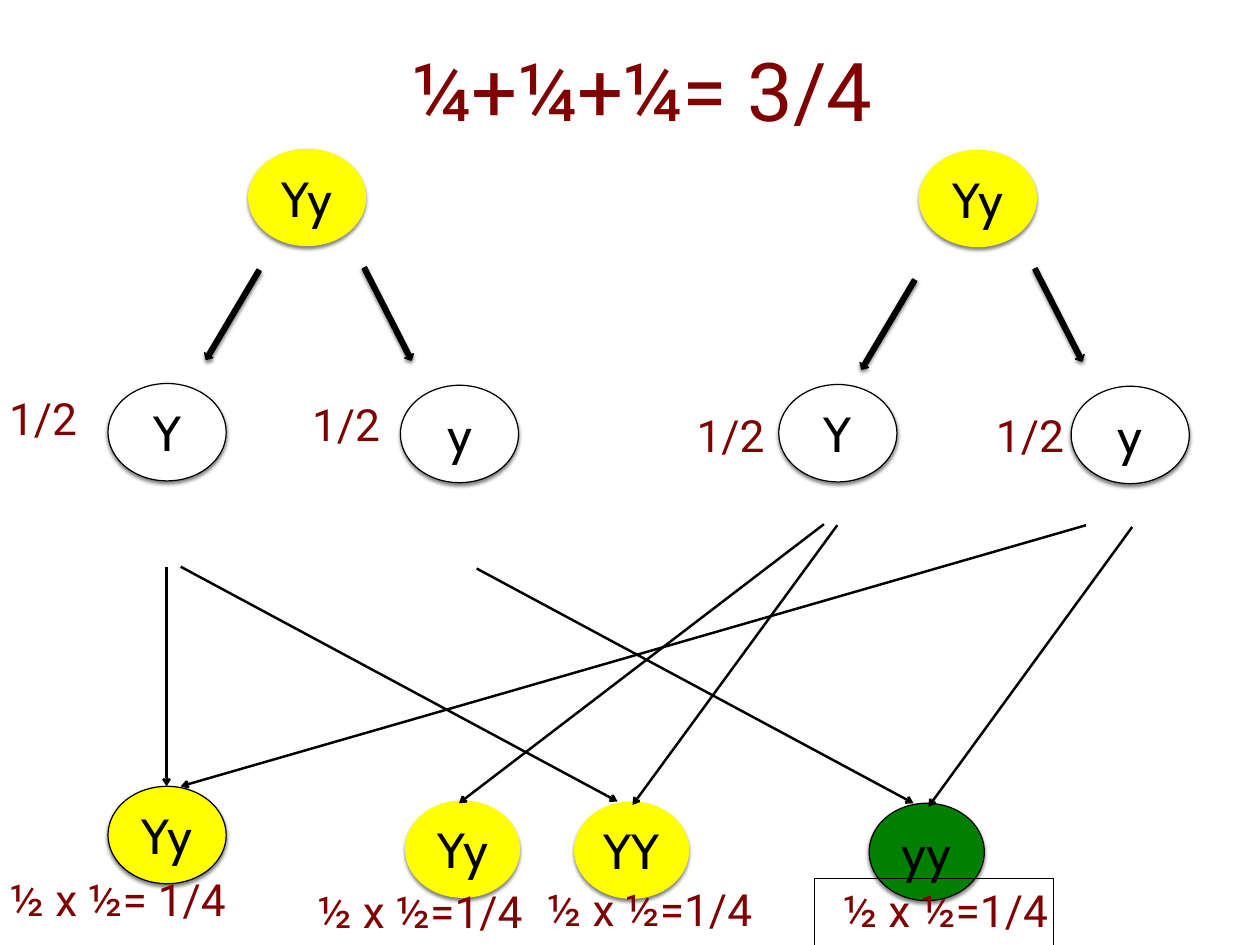
import pptx
import pptx.util
import pptx.dml.color
import pptx.enum.shapes
import pptx.enum.text
import pptx.oxml
import pptx.oxml.ns

THEME = {
    "yellow": "FFFF00", "green": "008000", "white": "FFFFFF", "black": "000000", "maroon": "800000",
    "gene_font": "Cabin", "label_font": "Roboto",
    "gene_size": 40, "label_size": 36, "title_size": 66,
}
SHAPES = pptx.enum.shapes.MSO_SHAPE
ALIGN = pptx.enum.text.PP_ALIGN
ANCHOR = pptx.enum.text.MSO_ANCHOR
NAMESPACE = pptx.oxml.ns.nsdecls("a")
SHADOW = (
    f'<a:effectLst {NAMESPACE}><a:outerShdw blurRad="38100" dist="25400" dir="5400000" rotWithShape="0">'
    '<a:srgbClr val="000000"><a:alpha val="50000"/></a:srgbClr></a:outerShdw></a:effectLst>'
)

deck = pptx.Presentation()
deck.slide_width = pptx.util.Inches(14.22)
deck.slide_height = pptx.util.Inches(10.67)
page = deck.slides.add_slide(deck.slide_layouts[6])
cell = deck.slide_width / 64  # the page is a grid of 64 columns by 48 rows


def add_box(kind, left, top, width, height, fill=None, outline=False):
    box = page.shapes.add_shape(kind, *(round(cell * n) for n in (left, top, width, height)))
    box.shadow.inherit = False
    if fill:
        box.fill.solid()
        box.fill.fore_color.rgb = pptx.dml.color.RGBColor.from_string(THEME[fill])
        properties = box.fill._xPr
        properties.remove(properties.find(pptx.oxml.ns.qn("a:effectLst")))
        properties.append(pptx.oxml.parse_xml(SHADOW))
    else:
        box.fill.background()
    if outline:
        box.line.color.rgb = pptx.dml.color.RGBColor.from_string(THEME["black"])
        box.line.width = pptx.util.Pt(1)
    else:
        box.line.fill.background()
    return box


def write(box, text, style, colour, align, anchor=ANCHOR.MIDDLE):
    frame = box.text_frame
    frame.text = text
    frame.word_wrap = False
    frame.vertical_anchor = anchor
    frame.margin_left = frame.margin_right = pptx.util.Inches(0.06)
    frame.margin_top = frame.margin_bottom = pptx.util.Inches(0.06)
    para = frame.paragraphs[0]
    para.alignment = align
    span = para.runs[0]
    span.font.name = THEME["gene_font" if style == "gene" else "label_font"]
    span.font.size = pptx.util.Pt(THEME[style + "_size"])
    span.font.color.rgb = pptx.dml.color.RGBColor.from_string(THEME[colour])


# Parents and their gametes: the second family repeats the first, further right
family_circles = [
    ("Yy", 12.6, 7.56, "yellow", False),
    ("Y", 5.49, 19.49, "white", True),
    ("y", 20.34, 19.58, "white", True),
]
families = [(0, 0, 9.18, 15.75), (34.07, 0.05, 42.48, 16.25)]
for shift, drop, arrow_left, arrow_top in families:
    for gene, left, top, fill, outline in family_circles:
        circle = add_box(SHAPES.OVAL, left + shift, top + drop, 6, 4.95, fill, outline)
        write(circle, gene, "gene", "black", ALIGN.CENTER)
    for left, top, angle in [(17.06 + shift, 15.71 + drop, 63), (arrow_left, arrow_top, 120.7)]:
        arrow = add_box(SHAPES.RIGHT_ARROW, left, top, 5.27, 0.5, "black", True)
        arrow.rotation = angle

# Offspring, each with the lines that lead to it: from x, from y, to x, to y
offspring = [
    ("Yy", 5.49, 39.96, 6, "yellow", True,
     [(8.46, 28.8, 8.46, 39.96), (55.17, 26.69, 9.18, 39.96)]),
    ("Yy", 20.57, 40.68, 5.85, "yellow", False, [(41.85, 26.64, 23.31, 40.82)]),
    ("YY", 29.16, 40.73, 5.85, "yellow", False,
     [(9.18, 28.8, 31.37, 40.73), (42.53, 26.69, 32.13, 40.91)]),
    ("yy", 44.15, 40.82, 5.85, "green", True,
     [(24.21, 28.89, 46.4, 40.82), (57.51, 26.78, 47.16, 41)]),
]
for gene, left, top, width, fill, outline, lines in offspring:
    circle = add_box(SHAPES.OVAL, left, top, width, 4.95, fill, outline)
    write(circle, gene, "gene", "black", ALIGN.CENTER)
    for ends in lines:
        line = page.shapes.add_connector(
            pptx.enum.shapes.MSO_CONNECTOR.STRAIGHT, *(round(cell * n) for n in ends))
        line.line.color.rgb = pptx.dml.color.RGBColor.from_string(THEME["black"])
        line.line.width = pptx.util.Pt(2)
        line.line._ln.append(pptx.oxml.parse_xml(f'<a:tailEnd {NAMESPACE} type="arrow"/>'))
        line._element.spPr.append(pptx.oxml.parse_xml(f"<a:effectLst {NAMESPACE}/>"))

# Chance of each gamete
for left, top in [(0.09, 19.62), (15.48, 19.94), (35.01, 20.48), (50.22, 20.48)]:
    label = add_box(SHAPES.RECTANGLE, left, top, 4.1, 3.24)
    write(label, "1/2", "label", "maroon", ALIGN.RIGHT)

# Chance of each offspring; the last one is framed
products = [
    ("½ x ½= 1/4", -0.4, 44.06, 3.24, False),
    ("½ x ½=1/4", 14.67, 44.64, 3.24, False),
    ("½ x ½=1/4", 26.33, 44.55, 3.24, False),
    ("½ x ½=1/4", 41.36, 44.64, 5.94, True),
]
for text, left, top, height, framed in products:
    label = add_box(SHAPES.RECTANGLE, left, top, 12.15, height, outline=framed)
    write(label, text, "label", "maroon", ALIGN.RIGHT, ANCHOR.TOP)

# Sum of the yellow offspring
title = add_box(SHAPES.RECTANGLE, 19.53, 1.8, 25.07, 5.49)
write(title, "¼+¼+¼= 3/4", "title", "maroon", ALIGN.RIGHT)

deck.save("out.pptx")
